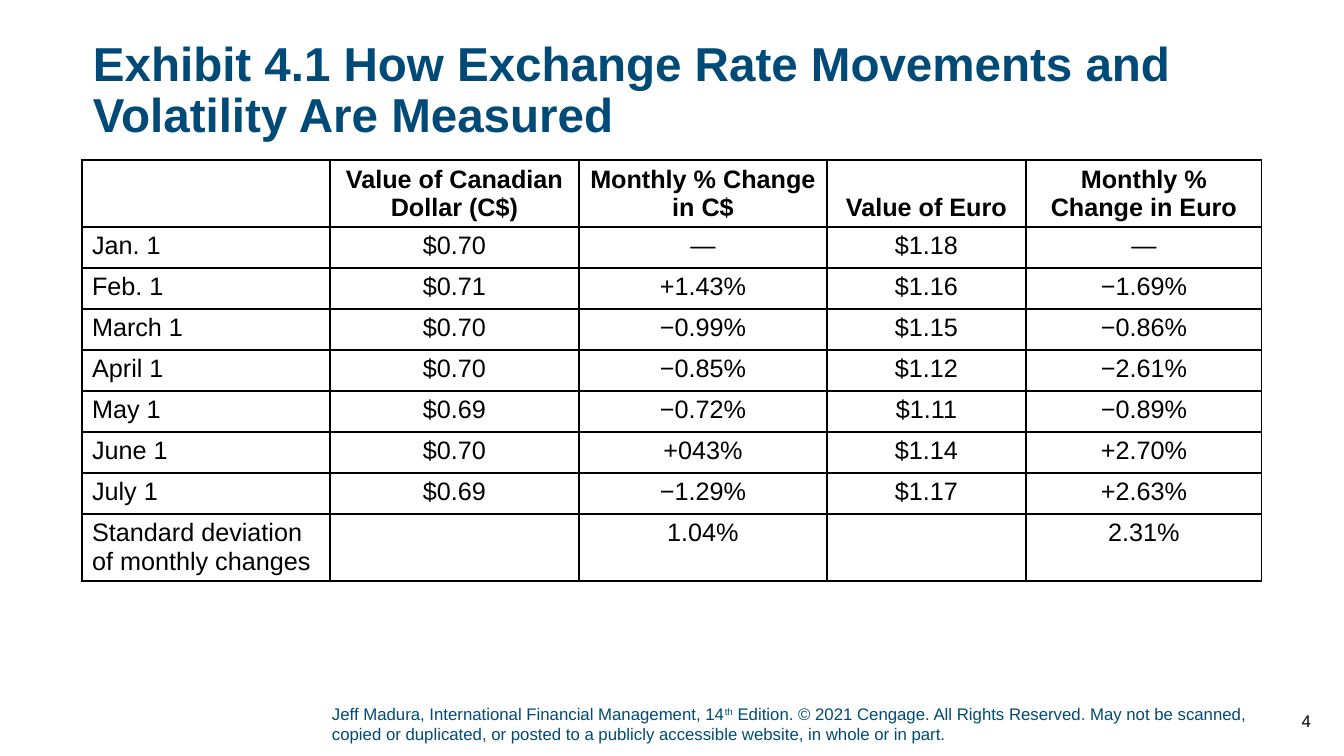
from dataclasses import dataclass
from typing import NamedTuple

from lxml import etree
from pptx import Presentation
from pptx import util as u
from pptx.dml import color
from pptx.enum import text
from pptx.oxml import ns

EMU_PER_PX = 914400 / 100.8


@dataclass(frozen=True)
class Theme:
    font: str = "Arial"
    blue: str = "004A78"
    black: str = "000000"
    title: int = 34
    table: int = 18
    small: int = 12
    border: int = 1


class Box(NamedTuple):
    left: int
    top: int
    width: int
    height: int


class Month(NamedTuple):
    label: str
    cad: str
    cad_change: str
    euro: str
    euro_change: str


THEME = Theme()
HEADERS = Month("", "Value of Canadian Dollar (C$)", "Monthly % Change in C$",
                "Value of Euro", "Monthly % Change in Euro")
MONTHS = [
    Month("Jan. 1", "$0.70", "—", "$1.18", "—"),
    Month("Feb. 1", "$0.71", "+1.43%", "$1.16", "−1.69%"),
    Month("March 1", "$0.70", "−0.99%", "$1.15", "−0.86%"),
    Month("April 1", "$0.70", "−0.85%", "$1.12", "−2.61%"),
    Month("May 1", "$0.69", "−0.72%", "$1.11", "−0.89%"),
    Month("June 1", "$0.70", "+043%", "$1.14", "+2.70%"),
    Month("July 1", "$0.69", "−1.29%", "$1.17", "+2.63%"),
]
DEVIATION = Month("Standard deviation of monthly changes", "", "1.04%", "", "2.31%")
COLUMN_WIDTHS = [248, 249, 248, 199, 236]
ROW_HEIGHT, TALL_ROW = 41, 67


def px(n: int) -> u.Emu:
    return u.Emu(round(n * EMU_PER_PX))


def place(sp, box: Box) -> None:
    sp.left, sp.top, sp.width, sp.height = map(px, box)


def set_frame(tf, *, anchor, bottom: int = 0) -> None:
    tf.word_wrap = True
    tf.auto_size = text.MSO_AUTO_SIZE.NONE
    tf.vertical_anchor = anchor
    tf.margin_left = tf.margin_right = tf.margin_top = 0
    tf.margin_bottom = px(bottom)


def add_text(p, content: str, *, size: int, rgb: str = THEME.black,
             bold: bool = False, align=text.PP_ALIGN.LEFT, baseline: int = 0) -> None:
    p.alignment = align
    r = p.add_run()
    r.text = content
    r.font.name = THEME.font
    r.font.size = u.Pt(size)
    r.font.bold = bold
    r.font.color.rgb = color.RGBColor.from_string(rgb)
    if baseline:
        r.font._element.set("baseline", str(baseline * 1000))


def set_borders(cell) -> None:
    tc_pr = cell._tc.get_or_add_tcPr()
    for i, side in enumerate(("lnL", "lnR", "lnT", "lnB")):
        ln = etree.Element(ns.qn(f"a:{side}"), w=str(u.Pt(THEME.border)))
        fill = etree.SubElement(ln, ns.qn("a:solidFill"))
        etree.SubElement(fill, ns.qn("a:srgbClr"), val=THEME.black)
        tc_pr.insert(i, ln)


def add_title(s) -> None:
    sp = s.shapes.title
    place(sp, Box(93, 40, 1159, 102))
    set_frame(sp.text_frame, anchor=text.MSO_ANCHOR.TOP)
    p = sp.text_frame.paragraphs[0]
    p.line_spacing = 0.9
    add_text(p, "Exhibit 4.1 How Exchange Rate Movements and Volatility Are Measured",
             size=THEME.title, rgb=THEME.blue, bold=True)


def add_rates(s) -> None:
    rows = [HEADERS, *MONTHS, DEVIATION]
    heights = [TALL_ROW, *[ROW_HEIGHT] * len(MONTHS), TALL_ROW]
    box = Box(82, 160, sum(COLUMN_WIDTHS), sum(heights))
    table = s.shapes.add_table(len(rows), len(COLUMN_WIDTHS), *map(px, box)).table
    table.horz_banding = False
    for column, width in zip(table.columns, COLUMN_WIDTHS):
        column.width = px(width)
    for i, (row, height, values) in enumerate(zip(table.rows, heights, rows)):
        row.height = px(height)
        for j, (cell, value) in enumerate(zip(row.cells, values)):
            cell.fill.background()
            cell.vertical_anchor = text.MSO_ANCHOR.TOP if i else text.MSO_ANCHOR.BOTTOM
            set_borders(cell)
            if value:
                add_text(cell.text_frame.paragraphs[0], value, size=THEME.table, bold=i == 0,
                         align=text.PP_ALIGN.CENTER if j else text.PP_ALIGN.LEFT)


def add_copyright(s) -> None:
    sp = s.shapes.add_textbox(*map(px, Box(332, 704, 931, 45)))
    set_frame(sp.text_frame, anchor=text.MSO_ANCHOR.BOTTOM, bottom=5)
    p = sp.text_frame.paragraphs[0]
    for content, baseline in (
        ("Jeff Madura, International Financial Management, 14", 0),
        ("th", 30),
        (" Edition. © 2021 Cengage. All Rights Reserved. May not be scanned, copied or "
         "duplicated, or posted to a publicly accessible website, in whole or in part.", 0),
    ):
        add_text(p, content, size=THEME.small, rgb=THEME.blue, baseline=baseline)


def add_page_number(s) -> None:
    sp = s.shapes.add_textbox(*map(px, Box(1266, 701, 45, 40)))
    set_frame(sp.text_frame, anchor=text.MSO_ANCHOR.MIDDLE)
    add_text(sp.text_frame.paragraphs[0], "4", size=THEME.small, align=text.PP_ALIGN.RIGHT)


def main() -> None:
    prs = Presentation()
    prs.slide_width, prs.slide_height = px(1344), px(756)
    s = prs.slides.add_slide(prs.slide_layouts[5])
    add_copyright(s)
    add_title(s)
    add_rates(s)
    add_page_number(s)
    prs.save("out.pptx")


if __name__ == "__main__":
    main()
